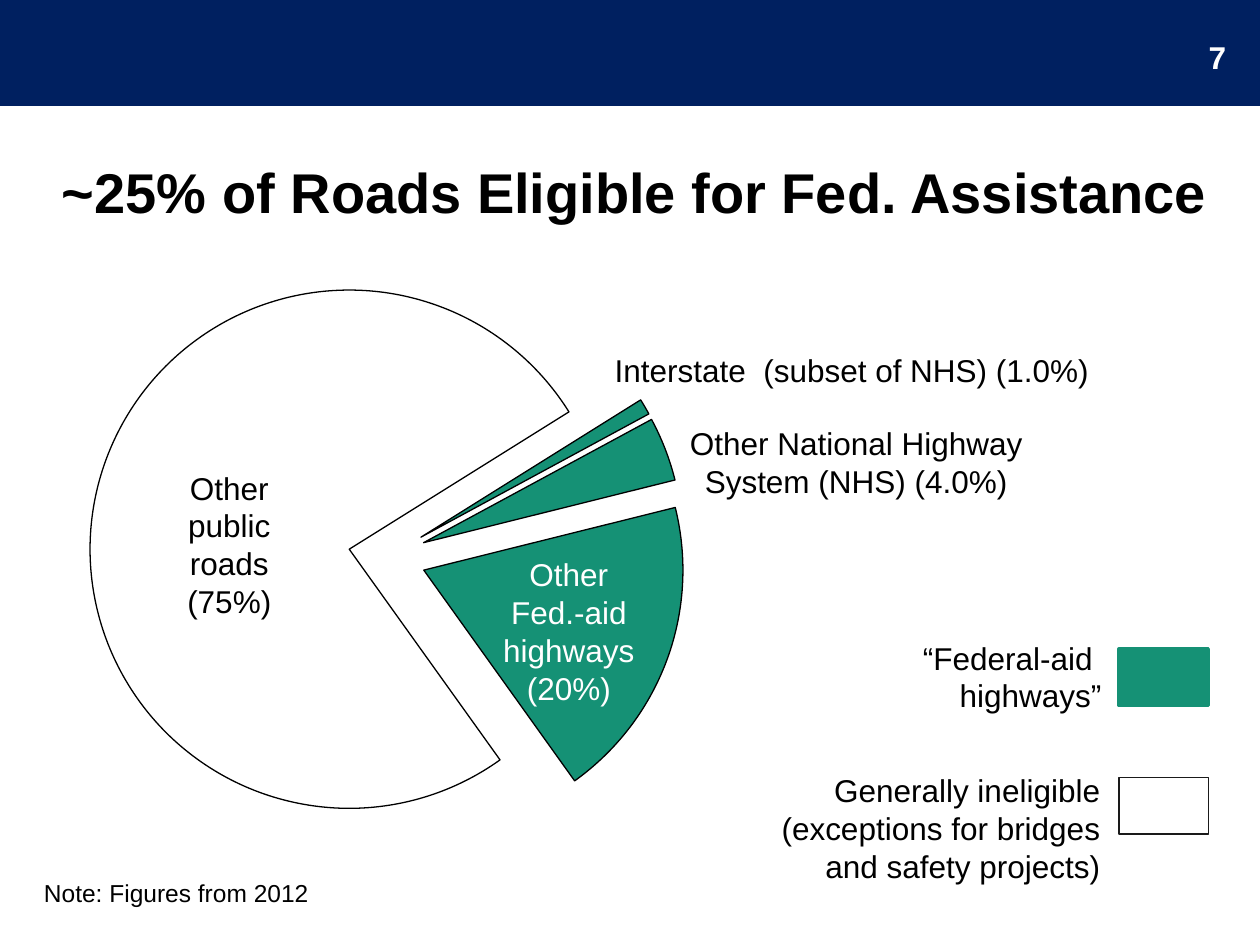
from pptx import Presentation, util as u
from pptx.chart.data import CategoryChartData
from pptx.dml.color import RGBColor
from pptx.enum import chart as c, shapes, text as t
from pptx.oxml import parse_xml
from pptx.oxml.ns import nsdecls

NAVY = RGBColor(0x00, 0x20, 0x60)
GREEN = RGBColor(0x15, 0x91, 0x75)
WHITE = RGBColor(0xFF, 0xFF, 0xFF)
BLACK = RGBColor(0x00, 0x00, 0x00)
CHARCOAL = RGBColor(0x1A, 0x1A, 0x1A)
LEFT, CENTER, RIGHT = t.PP_ALIGN.LEFT, t.PP_ALIGN.CENTER, t.PP_ALIGN.RIGHT

presentation = Presentation()
presentation.slide_width, presentation.slide_height = u.Inches(10), u.Inches(7.5)
slide = presentation.slides.add_slide(presentation.slide_layouts[5])


def grid(left, top, width, height):
    """Turn cells of a 100 by 100 grid over the slide into lengths."""
    column, row = presentation.slide_width / 100, presentation.slide_height / 100
    return [int(n) for n in (left * column, top * row, width * column, height * row)]


def set_font(paragraph, size, color, align, bold=False):
    paragraph.alignment = align
    font = paragraph.font
    font.name, font.size, font.bold = "Arial", u.Pt(size), bold
    font.color.rgb = color


# Header band and legend swatches
for cells, fill, line, weight in (
    ((0, 0, 100, 11.07), NAVY, NAVY, 2),
    ((88.8, 68.67, 7.1, 6), GREEN, GREEN, 2),
    ((88.8, 82.27, 7.1, 6), WHITE, CHARCOAL, 0.75),
):
    shape = slide.shapes.add_shape(shapes.MSO_SHAPE.RECTANGLE, *grid(*cells))
    shape.shadow.inherit = False
    shape.fill.solid()
    shape.fill.fore_color.rgb = fill
    shape.line.color.rgb = line
    shape.line.width = u.Pt(weight)

# Title
title = slide.shapes.title
title.left, title.top, title.width, title.height = grid(2.5, 16.67, 95.8, 7.07)
title.text_frame.text = "~25% of Roads Eligible for Fed. Assistance"
title.text_frame.vertical_anchor = t.MSO_ANCHOR.MIDDLE
title.text_frame.auto_size = t.MSO_AUTO_SIZE.NONE
set_font(title.text_frame.paragraphs[0], 32, BLACK, CENTER, bold=True)

# Pie of road shares
road_data = CategoryChartData()
road_data.categories = ["1", "2", "3", "4"]
road_data.add_series("Series 1", (1, 4, 19, 76))
chart = slide.shapes.add_chart(
    c.XL_CHART_TYPE.PIE, *grid(5.6, 25.33, 49.8, 67.2), road_data
).chart
chart.has_title = chart.has_legend = False
chart.font.name, chart.font.size = "Arial", u.Pt(18)
chart.font.color.rgb = BLACK
pie = chart.plots[0]
pie.vary_by_categories = False
series = pie.series[0]
slices = [series.points[number].format for number in range(4)]
for part in [series.format, *slices]:
    part.fill.solid()
    part.fill.fore_color.rgb = GREEN
    part.line.color.rgb = BLACK
    part.line.width = u.Pt(0.75)
slices[3].fill.background()

namespace = nsdecls("c")
series_properties = series._element.find("{*}spPr")
series_properties.addnext(parse_xml(f'<c:explosion {namespace} val="15"/>'))
pie._element.append(parse_xml(f'<c:firstSliceAng {namespace} val="58"/>'))
plot_area = chart._chartSpace.chart.plotArea
for old_layout in plot_area.findall("{*}layout"):
    plot_area.remove(old_layout)
plot_area.insert(0, parse_xml(
    f'<c:layout {namespace}><c:manualLayout><c:layoutTarget val="inner"/>'
    '<c:xMode val="edge"/><c:yMode val="edge"/><c:x val="0.03"/><c:y val="0.03"/>'
    '<c:w val="0.95"/><c:h val="0.94"/></c:manualLayout></c:layout>'
))

# Labels; \v is a line break within a paragraph
for cells, wording, size, color, align, bold in (
    ((75, 3.33, 23.3, 5.33), "7", 18, WHITE, RIGHT, True),
    ((46.7, 36.53, 42.5, 5.33), "Interstate  (subset of NHS) (1.0%) ", 18, BLACK, CENTER, False),
    ((52.4, 44.27, 31.1, 9.47), "Other National Highway System (NHS) (4.0%)", 18, BLACK, CENTER, False),
    ((69.4, 66.93, 19, 9.47), "“Federal-aid \vhighways”", 18, BLACK, RIGHT, False),
    ((59.2, 80.93, 29.1, 13.47),
     "Generally ineligible\v(exceptions for bridges\vand safety projects)", 18, BLACK, RIGHT, False),
    ((2.5, 92.27, 30.8, 4.53), "Note: Figures from 2012", 14, BLACK, LEFT, False),
    ((35.8, 58.13, 18.7, 17.47), "Other\vFed.-aid\vhighways\v(20%)", 18, WHITE, CENTER, False),
    ((11.5, 48.93, 13.4, 17.47), "Other\vpublic\vroads\v(75%)", 18, BLACK, CENTER, False),
):
    frame = slide.shapes.add_textbox(*grid(*cells)).text_frame
    frame.word_wrap = True
    frame.text = wording
    # A text frame turns \v into a line break
    set_font(frame.paragraphs[0], size, color, align, bold)

presentation.save("out.pptx")
